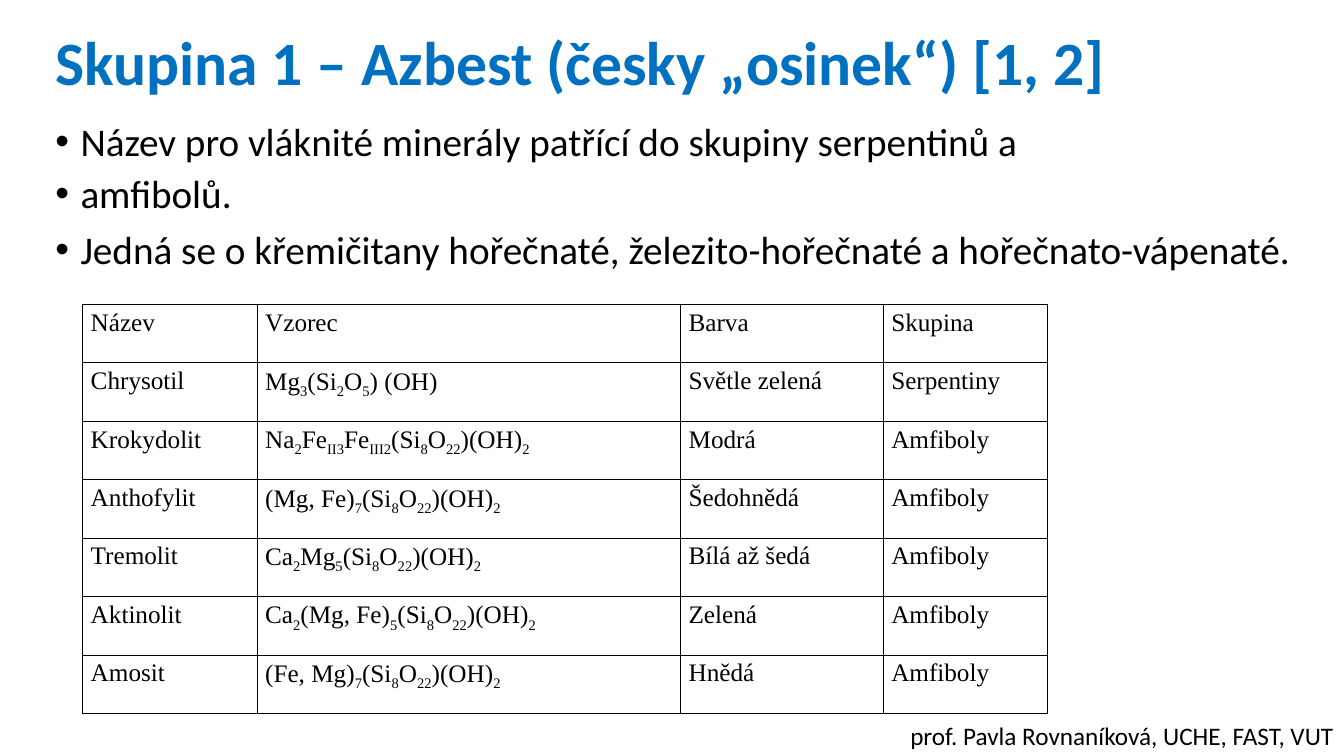
import dataclasses
import typing

import lxml.etree
import pptx
import pptx.dml.color
import pptx.enum.text
import pptx.oxml.ns
import pptx.util

PX = 9144
HUES = {"title": "0070C0", "ink": "000000"}
SANS, SERIF = "Calibri", "Times New Roman"
ANCHOR = pptx.enum.text.MSO_ANCHOR


@dataclasses.dataclass
class Line:
    text: str
    size: int
    hue: str = "ink"
    bold: bool = False
    space: float = 1.0
    before: int = 0
    bullet: bool = False


@dataclasses.dataclass
class Box:
    left: int
    top: int
    width: int
    height: int
    lines: typing.List[Line]
    anchor: typing.Any = ANCHOR.TOP


BOXES = [
    Box(45, 24, 1150, 81, [
        Line("Skupina 1 – Azbest (česky „osinek“) [1, 2]", 44, "title", True, 0.9),
    ], ANCHOR.MIDDLE),
    Box(45, 121, 1249, 526, [
        Line("Název pro vláknité minerály patřící do skupiny serpentinů a",
             28, space=0.8, before=10, bullet=True),
        Line("amfibolů.", 28, space=0.8, before=10, bullet=True),
        Line("Jedná se o křemičitany hořečnaté, železito-hořečnaté a hořečnato-vápenaté.",
             28, space=0.9, before=10, bullet=True),
    ]),
    Box(893, 710, 481, 40, [Line("prof. Pavla Rovnaníková, UCHE, FAST, VUT", 18)]),
]

WIDTHS = [173, 420, 201, 163]
ROW = 58
ROWS = [
    ("Název", "Vzorec", "Barva", "Skupina"),
    ("Chrysotil", "Mg_3_(Si_2_O_5_) (OH)", "Světle zelená", "Serpentiny"),
    ("Krokydolit", "Na_2_Fe_II3_Fe_III2_(Si_8_O_22_)(OH)_2", "Modrá", "Amfiboly"),
    ("Anthofylit", "(Mg, Fe)_7_(Si_8_O_22_)(OH)_2", "Šedohnědá", "Amfiboly"),
    ("Tremolit", "Ca_2_Mg_5_(Si_8_O_22_)(OH)_2", "Bílá až šedá", "Amfiboly"),
    ("Aktinolit", "Ca_2_(Mg, Fe)_5_(Si_8_O_22_)(OH)_2", "Zelená", "Amfiboly"),
    ("Amosit", "(Fe, Mg)_7_(Si_8_O_22_)(OH)_2", "Hnědá", "Amfiboly"),
]


def add_tag(root: typing.Any, name: str, **attrs: str) -> typing.Any:
    return lxml.etree.SubElement(root, pptx.oxml.ns.qn(name), attrs)


def set_font(para: typing.Any, face: str, line: Line) -> None:
    para.line_spacing = line.space
    para.space_before = pptx.util.Pt(line.before)
    font = para.font
    font.name, font.size, font.bold = face, pptx.util.Pt(line.size), line.bold
    font.color.rgb = pptx.dml.color.RGBColor.from_string(HUES[line.hue])


def add_bullet(para: typing.Any) -> None:
    props = para._p.get_or_add_pPr()
    props.set("marL", str(25 * PX))
    props.set("indent", str(-25 * PX))
    add_tag(props, "a:buFont", typeface="Arial")
    add_tag(props, "a:buChar", char="•")


def draw_box(slide: typing.Any, box: Box) -> None:
    sides = [n * PX for n in (box.left, box.top, box.width, box.height)]
    frame = slide.shapes.add_textbox(*sides).text_frame
    frame.word_wrap = True
    frame.vertical_anchor = box.anchor
    for i, line in enumerate(box.lines):
        para = frame.add_paragraph() if i else frame.paragraphs[0]
        para.add_run().text = line.text
        if line.bullet:
            add_bullet(para)
        set_font(para, SANS, line)


def fill_cell(cell: typing.Any, text: str) -> None:
    cell.margin_left = cell.margin_right = 8 * PX
    cell.margin_top = cell.margin_bottom = 0
    para = cell.text_frame.paragraphs[0]
    for i, part in enumerate(text.split("_")):
        if part:
            run = para.add_run()
            run.text = part
            if i % 2:
                run._r.get_or_add_rPr().set("baseline", "-25000")
    set_font(para, SERIF, Line(text, 18, space=1.15))
    props = cell._tc.get_or_add_tcPr()
    for side in ("a:lnL", "a:lnR", "a:lnT", "a:lnB"):
        edge = add_tag(props, side, w=str(pptx.util.Pt(1)))
        add_tag(add_tag(edge, "a:solidFill"), "a:srgbClr", val=HUES["ink"])
    cell.fill.background()


def draw_table(slide: typing.Any, left: int, top: int) -> None:
    table = slide.shapes.add_table(
        len(ROWS), len(WIDTHS), left * PX, top * PX,
        sum(WIDTHS) * PX, ROW * len(ROWS) * PX).table
    table.first_row = table.horz_banding = False
    for col, width in zip(table.columns, WIDTHS):
        col.width = width * PX
    for row, texts in zip(table.rows, ROWS):
        row.height = ROW * PX
        for cell, text in zip(row.cells, texts):
            fill_cell(cell, text)


def main() -> None:
    deck = pptx.Presentation()
    deck.slide_width, deck.slide_height = 1333 * PX, 750 * PX
    slide = deck.slides.add_slide(deck.slide_layouts[6])
    title, body, credit = BOXES
    draw_box(slide, title)
    draw_box(slide, body)
    draw_table(slide, 82, 302)
    draw_box(slide, credit)
    deck.save("out.pptx")


if __name__ == "__main__":
    main()
